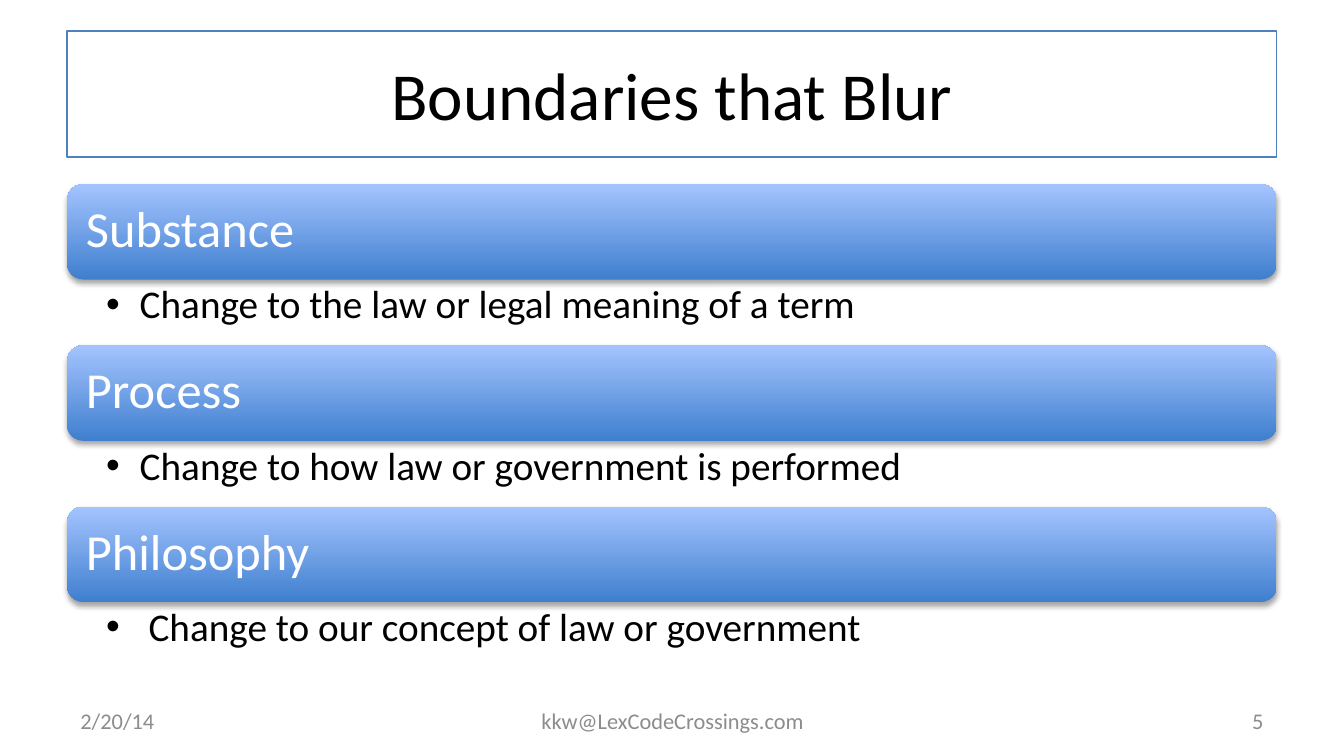
import pptx
import pptx.util
import pptx.dml.color
import pptx.enum.shapes
import pptx.enum.text
import pptx.oxml
import pptx.oxml.ns

Inches = pptx.util.Inches
Pt = pptx.util.Pt
RGB = pptx.dml.color.RGBColor.from_string
KIND = pptx.enum.shapes.MSO_SHAPE
ALIGN = pptx.enum.text.PP_ALIGN
ANCHOR = pptx.enum.text.MSO_ANCHOR
NS = pptx.oxml.ns.nsdecls("a")

colors = {
    "white": "FFFFFF",
    "black": "000000",
    "edge": "4F81BD",
    "deep": "3F7FCE",
    "light": "A4C4FF",
    "gray": "8C8C8C",
}


def write(shape, text, size=12, color="black", align=ALIGN.LEFT, anchor=ANCHOR.MIDDLE,
          pad=(0.1, 0.05, 0.1, 0.05), space=1.0, bullet=False):
    frame = shape.text_frame
    frame.word_wrap = True
    frame.vertical_anchor = anchor
    frame.margin_left, frame.margin_top, frame.margin_right, frame.margin_bottom = map(Inches, pad)
    para = frame.paragraphs[0]
    para.text = text
    para.alignment = align
    para.line_spacing = space
    if bullet:
        props = para._p.get_or_add_pPr()
        props.set("marL", str(Inches(0.25)))
        props.set("indent", str(Inches(-0.25)))
        props.append(pptx.oxml.parse_xml(f'<a:buFont {NS} typeface="Arial"/>'))
        props.append(pptx.oxml.parse_xml(f'<a:buChar {NS} char="•"/>'))
        para.level = 1
    font = para.runs[0].font
    font.name = "Calibri"
    font.size = Pt(size)
    font.color.rgb = RGB(colors[color])


deck = pptx.Presentation()
deck.slide_width = Inches(10)
deck.slide_height = Inches(10 * 9 / 16)
slide = deck.slides.add_slide(deck.slide_layouts[6])
shapes = slide.shapes

title = shapes.add_shape(KIND.RECTANGLE, Inches(0.5), Inches(0.23), Inches(9), Inches(0.94))
title.shadow.inherit = False
title.fill.solid()
title.fill.fore_color.rgb = RGB(colors["white"])
title.line.color.rgb = RGB(colors["edge"])
title.line.width = Pt(0.75)
write(title, "Boundaries that Blur", size=36, align=ALIGN.CENTER)

topics = [
    ("Substance", "Change to the law or legal meaning of a term"),
    ("Process", "Change to how law or government is performed"),
    ("Philosophy", " Change to our concept of law or government"),
]
for row, (head, note) in enumerate(topics):
    top = 1.37 + 1.2 * row
    bar = shapes.add_shape(KIND.ROUNDED_RECTANGLE, Inches(0.5), Inches(top), Inches(9), Inches(0.71))
    bar.fill.gradient()
    bar.fill.gradient_angle = 90
    for stop, place, tone in zip(bar.fill.gradient_stops, (0, 1), ("deep", "light")):
        stop.position = place
        stop.color.rgb = RGB(colors[tone])
    bar.line.fill.background()
    bar.shadow.inherit = False
    effect = bar._element.spPr.find(pptx.oxml.ns.qn("a:effectLst"))
    effect.append(pptx.oxml.parse_xml(
        f'<a:outerShdw {NS} blurRad="{Pt(3.1)}" dist="{Pt(1.8)}" dir="5400000" rotWithShape="0">'
        f'<a:srgbClr val="{colors["black"]}"><a:alpha val="35000"/></a:srgbClr></a:outerShdw>'))

    label = shapes.add_textbox(Inches(0.53), Inches(top + 0.03), Inches(8.93), Inches(0.64))
    write(label, head, size=27, color="white", pad=(0.11,) * 4, space=0.9)

    box = shapes.add_textbox(Inches(0.5), Inches(top + 0.71), Inches(9), Inches(0.49))
    write(box, note, size=21, anchor=ANCHOR.TOP, pad=(0.29, 0.04, 0.21, 0.04),
          space=0.9, bullet=True)

footer = [
    ("2/20/14", 0.5, 2.33, ALIGN.LEFT),
    ("kkw@LexCodeCrossings.com", 3.42, 3.17, ALIGN.CENTER),
    ("5", 7.17, 2.33, ALIGN.RIGHT),
]
for text, left, width, align in footer:
    box = shapes.add_textbox(Inches(left), Inches(5.21), Inches(width), Inches(0.3))
    write(box, text, color="gray", align=align)

deck.save("out.pptx")
